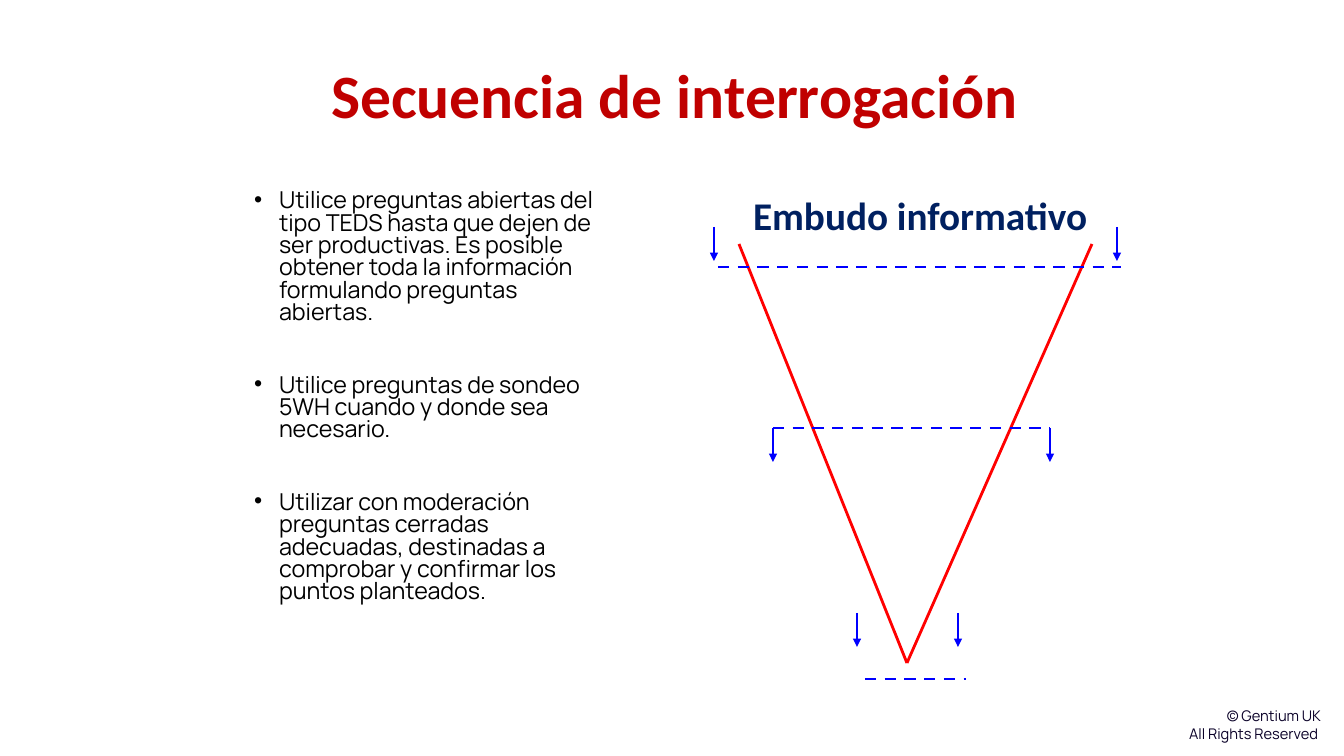
"""Build the slide on questioning sequence with its information funnel."""
import dataclasses

import lxml.etree
import pptx
import pptx.dml.color
import pptx.enum.dml
import pptx.enum.shapes
import pptx.enum.text
import pptx.oxml.ns
import pptx.util

TITLE = "Secuencia de interrogación"
ADVICE = [
    "Utilice preguntas abiertas del tipo TEDS hasta que dejen de ser productivas. "
    "Es posible obtener toda la información formulando preguntas abiertas.",
    "Utilice preguntas de sondeo 5WH cuando y donde sea necesario.",
    "Utilizar con moderación preguntas cerradas adecuadas, destinadas a comprobar "
    "y confirmar los puntos planteados.",
]
FUNNEL_HEADING = "Embudo informativo"
COPYRIGHT = ["© Gentium UK", "All Rights Reserved "]

FUNNEL_RIMS = [(739, 244), (1092, 244)]
FUNNEL_TIP = (907, 663)
ARROW_LENGTH = 34
LEVELS = [
    {"left": 714, "width": 403, "arrow_top": 227, "dash_shift": 4, "dash_y": 267},
    {"left": 773, "width": 277, "arrow_top": 428, "dash_shift": 0, "dash_y": 428},
    {"left": 857, "width": 101, "arrow_top": 613, "dash_shift": 8, "dash_y": 679},
]


@dataclasses.dataclass(frozen=True)
class Theme:
    title: str = "C00000"
    heading: str = "002060"
    body: str = "000000"
    rights: str = "0A0128"
    funnel: str = "FF0000"
    level: str = "0000FF"
    title_size: float = 44
    heading_size: float = 28
    body_size: float = 16.6
    rights_size: float = 10.5
    line_width: float = 2
    head_font: str = "Calibri"
    body_font: str = "Manrope"


THEME = Theme()
ALIGN = pptx.enum.text.PP_ALIGN


def px(length):
    return round(length * 914400 / 100.8)


def rgb(code):
    return pptx.dml.color.RGBColor.from_string(code)


def add_xml(parent, tag, **attributes):
    return lxml.etree.SubElement(parent, pptx.oxml.ns.qn(tag), **attributes)


def prepare(box, anchor=pptx.enum.text.MSO_ANCHOR.TOP):
    frame = box.text_frame
    frame.word_wrap = True
    frame.auto_size = pptx.enum.text.MSO_AUTO_SIZE.NONE
    frame.vertical_anchor = anchor
    return frame


def place(box, left, top, width, height):
    box.left, box.top, box.width, box.height = map(px, (left, top, width, height))
    return box


def write(paragraph, text, *, size, color, font=THEME.body_font, bold=False,
          align=ALIGN.LEFT, spacing=1.0, before=0, bullet=None):
    if bullet:
        properties = paragraph._p.get_or_add_pPr()
        properties.set("marL", str(px(25)))
        properties.set("indent", str(-px(25)))
        add_xml(properties, "a:buFont", typeface="Arial")
        add_xml(properties, "a:buChar", char=bullet)
    paragraph.alignment = align
    paragraph.line_spacing = spacing
    paragraph.space_before = pptx.util.Pt(before)
    run = paragraph.add_run()
    run.text = text
    run.font.size = pptx.util.Pt(size)
    run.font.name = font
    run.font.bold = bold
    run.font.color.rgb = rgb(color)


def write_list(frame, texts, before=0, **style):
    for index, text in enumerate(texts):
        paragraph = frame.add_paragraph() if index else frame.paragraphs[0]
        write(paragraph, text, before=before if index else 0, **style)


def draw_line(slide, start, end, color, dashed=False, arrow=False):
    connector = slide.shapes.add_connector(
        pptx.enum.shapes.MSO_CONNECTOR.STRAIGHT, *map(px, (*start, *end)))
    connector.line.color.rgb = rgb(color)
    connector.line.width = pptx.util.Pt(THEME.line_width)
    if dashed:
        connector.line.dash_style = pptx.enum.dml.MSO_LINE.DASH
    if arrow:
        add_xml(connector.line._get_or_add_ln(), "a:tailEnd", type="triangle")
    add_xml(connector._element.spPr, "a:effectLst")


def draw_level(slide, left, width, arrow_top, dash_shift, dash_y):
    dash_left = left + dash_shift
    draw_line(slide, (dash_left, dash_y), (dash_left + width, dash_y),
              THEME.level, dashed=True)
    for x in (left, left + width):
        draw_line(slide, (x, arrow_top), (x, arrow_top + ARROW_LENGTH),
                  THEME.level, arrow=True)


def main():
    deck = pptx.Presentation()
    deck.slide_width, deck.slide_height = px(1344), px(756)
    slide = deck.slides.add_slide(deck.slide_layouts[1])

    def add_box(*bounds):
        return slide.shapes.add_textbox(*map(px, bounds))

    rights = prepare(add_box(1171, 702, 160, 45))
    write_list(rights, COPYRIGHT, size=THEME.rights_size, color=THEME.rights,
               align=ALIGN.RIGHT)

    title = prepare(place(slide.shapes.title, 54, 27, 1242, 143),
                    pptx.enum.text.MSO_ANCHOR.MIDDLE)
    write(title.paragraphs[0], TITLE, size=THEME.title_size, color=THEME.title,
          font=THEME.head_font, bold=True, align=ALIGN.CENTER, spacing=0.9)

    advice = prepare(place(slide.placeholders[1], 244, 186, 375, 443))
    write_list(advice, ADVICE, before=36, size=THEME.body_size, color=THEME.body,
               spacing=0.8, bullet="•")

    for rim in FUNNEL_RIMS:
        draw_line(slide, rim, FUNNEL_TIP, THEME.funnel)
    heading = prepare(add_box(706, 186, 428, 58))
    write(heading.paragraphs[0], FUNNEL_HEADING, size=THEME.heading_size,
          color=THEME.heading, font=THEME.head_font, bold=True, align=ALIGN.CENTER)
    for level in LEVELS:
        draw_level(slide, **level)

    deck.save("out.pptx")


if __name__ == "__main__":
    main()
